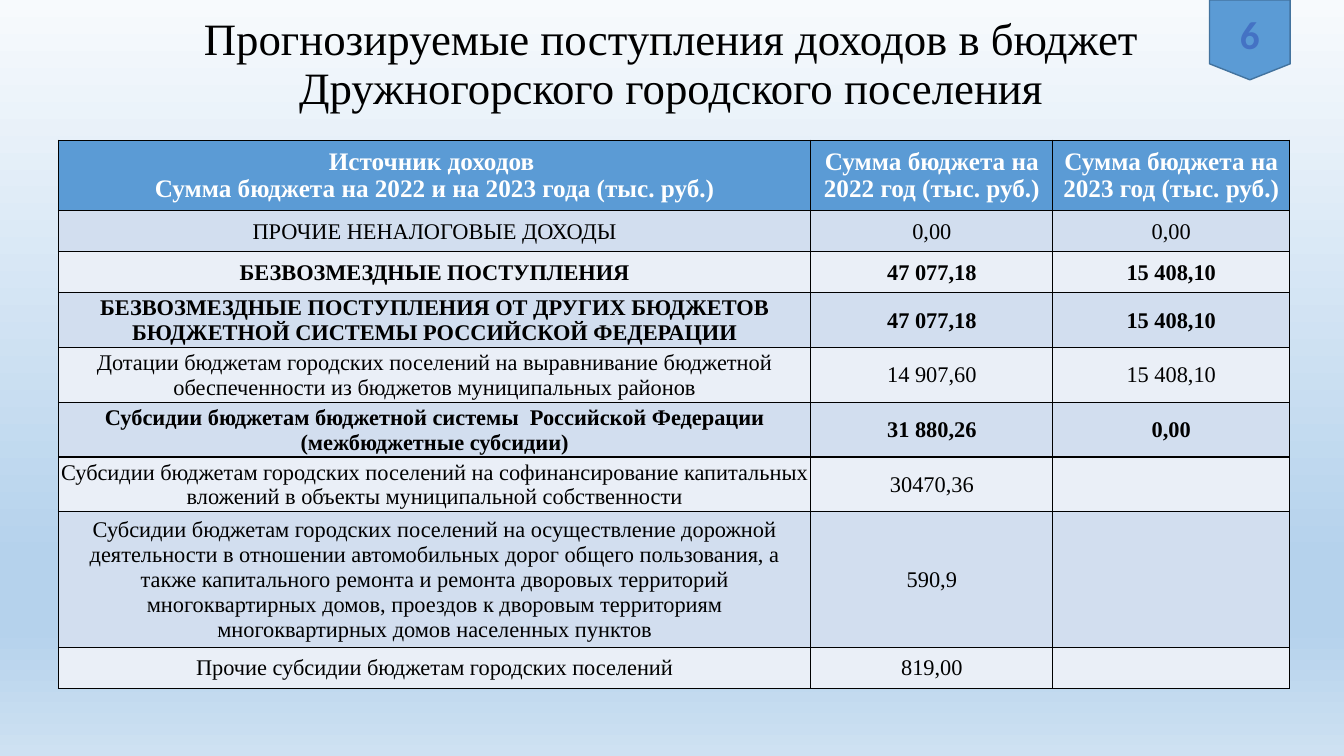
from dataclasses import dataclass

import pptx
import pptx.dml.color
import pptx.enum.shapes
import pptx.enum.text
import pptx.oxml
import pptx.oxml.ns
import pptx.util
from lxml import etree

Pt = pptx.util.Pt
CENTER = pptx.enum.text.PP_ALIGN.CENTER
MIDDLE = pptx.enum.text.MSO_ANCHOR.MIDDLE
BOTTOM = pptx.enum.text.MSO_ANCHOR.BOTTOM


@dataclass(frozen=True)
class Theme:
    font: str = "Times New Roman"
    number_font: str = "Calibri"
    black: str = "000000"
    white: str = "FFFFFF"
    accent: str = "5B9BD5"
    accent_line: str = "43739E"
    number: str = "4472C4"
    bands: tuple = ("D2DEEF", "EAEFF7")
    background: tuple = ((0, "F7FAFD"), (74, "B5D2EC"), (83, "B5D2EC"), (100, "CEE1F2"))
    title_size: int = 32
    header_size: int = 18
    body_size: int = 16
    number_size: int = 28


THEME = Theme()

TITLE = "Прогнозируемые поступления доходов в бюджет Дружногорского городского поселения"
HEADER = (
    "Источник доходов \nСумма бюджета на 2022 и на 2023 года (тыс. руб.)",
    "Сумма бюджета на 2022 год (тыс. руб.)",
    "Сумма бюджета на 2023 год (тыс. руб.)",
)
# Income source, 2022, 2023, bold
INCOME = (
    ("ПРОЧИЕ НЕНАЛОГОВЫЕ ДОХОДЫ", "0,00", "0,00", False),
    ("БЕЗВОЗМЕЗДНЫЕ ПОСТУПЛЕНИЯ", "47 077,18", "15 408,10", True),
    ("БЕЗВОЗМЕЗДНЫЕ ПОСТУПЛЕНИЯ ОТ ДРУГИХ БЮДЖЕТОВ БЮДЖЕТНОЙ СИСТЕМЫ "
     "РОССИЙСКОЙ ФЕДЕРАЦИИ", "47 077,18", "15 408,10", True),
    ("Дотации бюджетам городских поселений на выравнивание бюджетной обеспеченности "
     "из бюджетов муниципальных районов", "14 907,60", "15 408,10", False),
    ("Субсидии бюджетам бюджетной системы  Российской Федерации "
     "(межбюджетные субсидии)", "31 880,26", "0,00", True),
    ("Субсидии бюджетам городских поселений на софинансирование капитальных вложений "
     "в объекты муниципальной собственности", "30470,36", "", False),
    ("Субсидии бюджетам городских поселений на осуществление дорожной деятельности "
     "в отношении автомобильных дорог общего пользования, а также капитального ремонта "
     "и ремонта дворовых территорий многоквартирных домов, проездов к дворовым "
     "территориям многоквартирных домов населенных пунктов", "590,9", "", False),
    ("Прочие субсидии бюджетам городских поселений", "819,00", "", False),
)
COLUMN_WIDTHS = (537.4, 172.8, 169.2)
ROW_HEIGHT = 29.3


def rgb(value):
    return pptx.dml.color.RGBColor.from_string(value)


def write_text(frame, text, size, color, bold=False, font=THEME.font, spacing=None):
    """Write centred paragraphs, one for each line of text."""
    frame.word_wrap = True
    for index, line in enumerate(text.split("\n")):
        paragraph = frame.add_paragraph() if index else frame.paragraphs[0]
        paragraph.alignment = CENTER
        paragraph.line_spacing = spacing
        run = paragraph.add_run()
        run.text = line
        run.font.name = font
        run.font.size = Pt(size)
        run.font.bold = bold
        run.font.color.rgb = rgb(color)


def set_background(slide):
    fill = slide.background.fill
    fill.gradient()
    fill.gradient_angle = 270
    stops = slide.element.find(".//" + pptx.oxml.ns.qn("a:gsLst"))
    for stop in list(stops):
        stops.remove(stop)
    for position, color in THEME.background:
        stop = etree.SubElement(stops, pptx.oxml.ns.qn("a:gs"), pos=str(position * 1000))
        etree.SubElement(stop, pptx.oxml.ns.qn("a:srgbClr"), val=color)


def add_title(slide):
    box = slide.shapes.add_textbox(Pt(65.5), Pt(0), Pt(828), Pt(85))
    box.text_frame.vertical_anchor = BOTTOM
    write_text(box.text_frame, TITLE, THEME.title_size, THEME.black, spacing=0.9)


def set_borders(cell):
    properties = cell._tc.get_or_add_tcPr()
    for index, side in enumerate(("lnL", "lnR", "lnT", "lnB")):
        properties.insert(index, pptx.oxml.parse_xml(
            f'<a:{side} {pptx.oxml.ns.nsdecls("a")} w="{Pt(1)}"><a:solidFill>'
            f'<a:srgbClr val="{THEME.black}"/></a:solidFill></a:{side}>'))


def style_cell(cell, fill):
    cell.fill.solid()
    cell.fill.fore_color.rgb = rgb(fill)
    cell.vertical_anchor = MIDDLE
    set_borders(cell)


def add_income_table(slide):
    frame = slide.shapes.add_table(
        len(INCOME) + 1, len(HEADER), Pt(41.8), Pt(100.1),
        Pt(sum(COLUMN_WIDTHS)), Pt(ROW_HEIGHT * (len(INCOME) + 1)))
    table = frame.table
    for column, width in zip(table.columns, COLUMN_WIDTHS):
        column.width = Pt(width)
    for row in table.rows:
        row.height = Pt(ROW_HEIGHT)

    # Header row
    for cell, text in zip(table.rows[0].cells, HEADER):
        style_cell(cell, THEME.accent)
        write_text(cell.text_frame, text, THEME.header_size, THEME.white, bold=True)

    # Banded body rows
    for index, (*texts, bold) in enumerate(INCOME):
        for cell, text in zip(table.rows[index + 1].cells, texts):
            style_cell(cell, THEME.bands[index % 2])
            if text:
                cell.margin_left = cell.margin_right = cell.margin_top = Pt(0.72)
                cell.margin_bottom = Pt(0)
                write_text(cell.text_frame, text, THEME.body_size, THEME.black, bold)


def add_page_badge(slide, number):
    badge = slide.shapes.add_shape(
        pptx.enum.shapes.MSO_SHAPE.FLOWCHART_OFFPAGE_CONNECTOR,
        Pt(864), Pt(0), Pt(57.6), Pt(57))
    badge.shadow.inherit = False
    badge.fill.solid()
    badge.fill.fore_color.rgb = rgb(THEME.accent)
    badge.line.color.rgb = rgb(THEME.accent_line)
    badge.line.width = Pt(1)
    frame = badge.text_frame
    frame.margin_left = frame.margin_right = frame.margin_bottom = Pt(0)
    frame.margin_top = Pt(2)
    frame.vertical_anchor = MIDDLE
    write_text(frame, number, THEME.number_size, THEME.number, True, THEME.number_font)


def main():
    presentation = pptx.Presentation()
    presentation.slide_width = Pt(960)
    presentation.slide_height = Pt(540)
    slide = presentation.slides.add_slide(presentation.slide_layouts[6])
    set_background(slide)
    add_title(slide)
    add_income_table(slide)
    add_page_badge(slide, "6")
    presentation.save("out.pptx")


if __name__ == "__main__":
    main()
